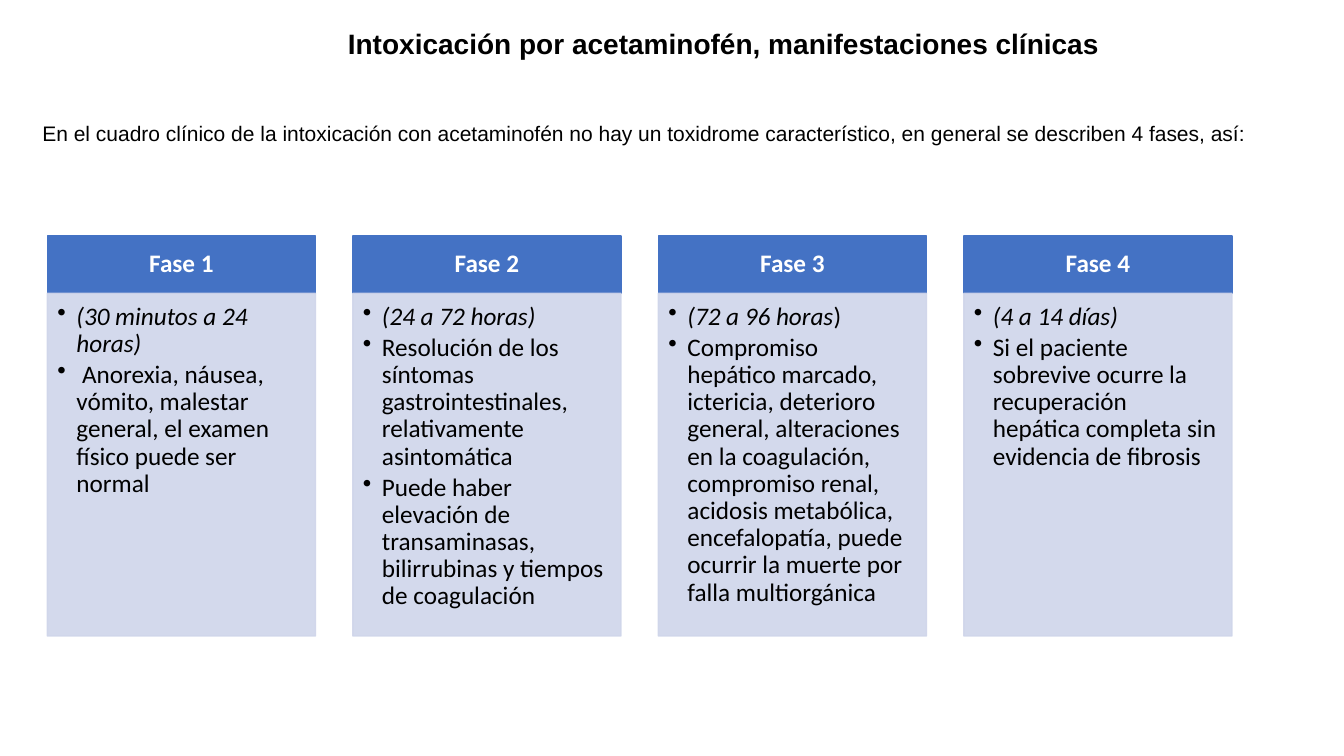
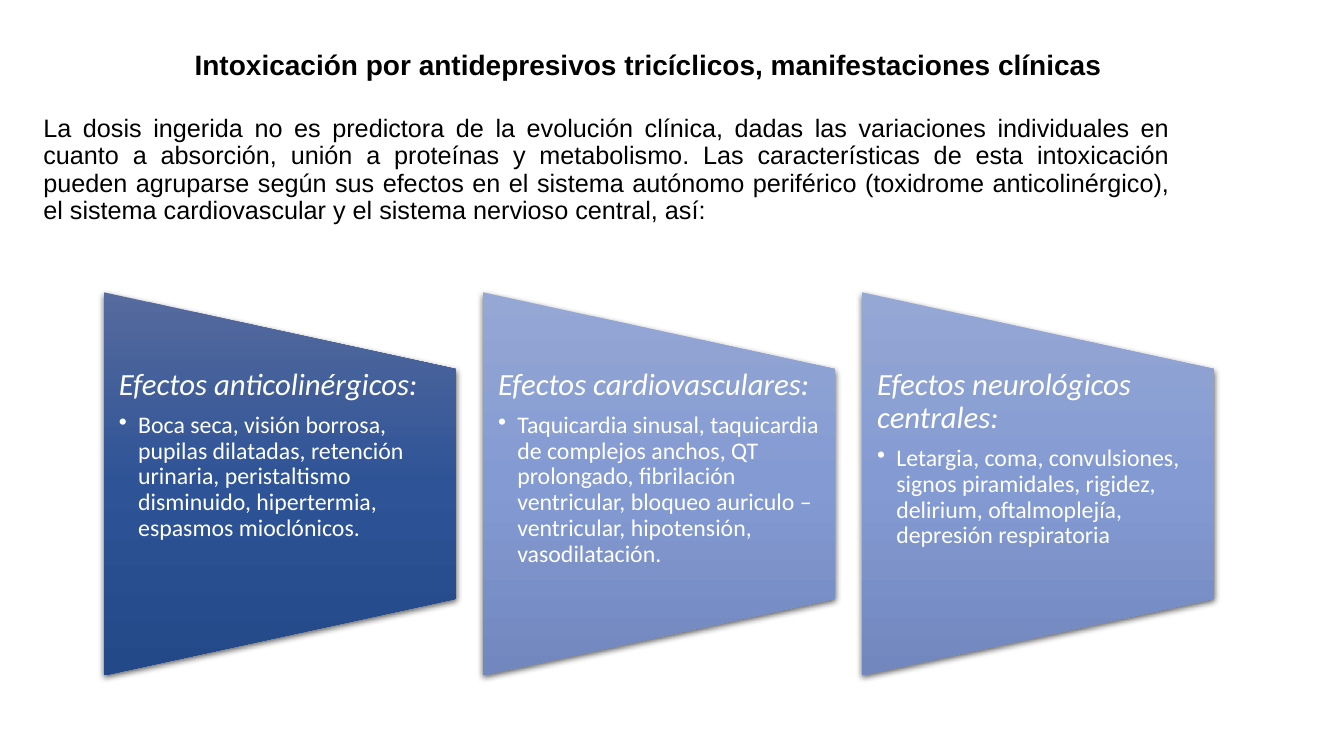
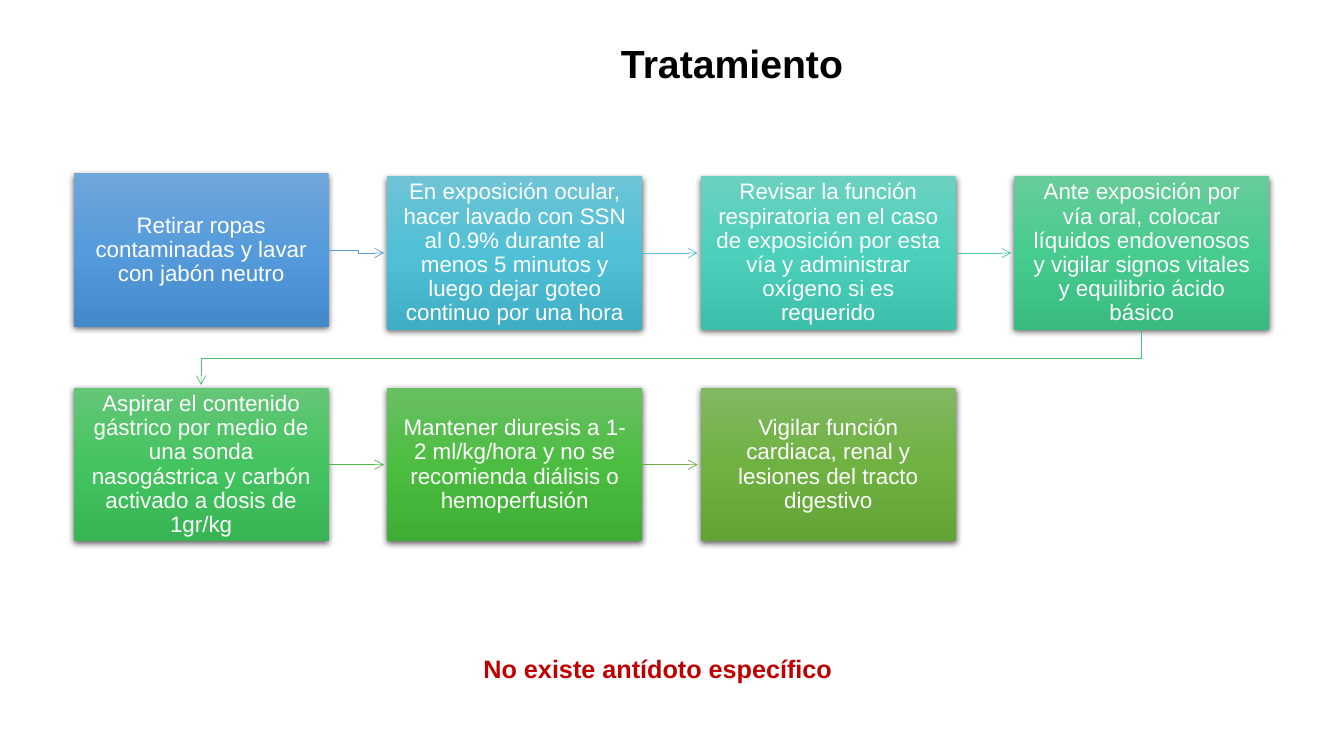
"""Build three slides on the clinical picture and treatment of poisoning."""
from copy import deepcopy
from dataclasses import dataclass

from lxml import etree
from pptx import Presentation
from pptx import util as u
from pptx.dml.color import RGBColor
from pptx.enum import shapes, text
from pptx.oxml import ns


@dataclass(frozen=True)
class Theme:
    """Colours, fonts and type sizes of the deck."""
    ink: str = "000000"
    white: str = "FFFFFF"
    header: str = "4472C4"
    panel: str = "CFD5EA"
    alert: str = "C00000"
    deep: tuple = ("566B9E", "2E5396", "244989")
    soft: tuple = ("95A7D4", "849AD2", "7187BE")
    sans: str = "Arial"
    label: str = "Calibri"
    small: int = 15
    step: int = 16
    detail: int = 17
    normal: int = 18
    title: int = 20
    heading: int = 22
    large: int = 28


@dataclass(frozen=True)
class Grid:
    """Equal cells, in inches."""
    left: float
    top: float
    width: float
    height: float
    pitch: float
    row_pitch: float = 0

    def cell(self, column, row=0):
        """Return left, top, width and height of one cell."""
        return (self.left + column * self.pitch, self.top + row * self.row_pitch,
                self.width, self.height)


THEME = Theme()
LEFT, CENTER, JUSTIFY = text.PP_ALIGN.LEFT, text.PP_ALIGN.CENTER, text.PP_ALIGN.JUSTIFY
TOP, MIDDLE = text.MSO_ANCHOR.TOP, text.MSO_ANCHOR.MIDDLE
RECTANGLE = shapes.MSO_SHAPE.RECTANGLE
TRAPEZOID = shapes.MSO_SHAPE.FLOWCHART_MANUAL_OPERATION

PHASES = [
    ("Fase 1", ("(30 minutos a 24 horas)", ""),
     [" Anorexia, náusea, vómito, malestar general, el examen físico puede ser normal"]),
    ("Fase 2", ("(24 a 72 horas)", ""),
     ["Resolución de los síntomas gastrointestinales, relativamente asintomática",
      "Puede haber elevación de transaminasas, bilirrubinas y tiempos de coagulación"]),
    ("Fase 3", ("(72 a 96 horas", ")"),
     ["Compromiso hepático marcado, ictericia, deterioro general, alteraciones en la "
      "coagulación, compromiso renal, acidosis metabólica, encefalopatía, puede ocurrir "
      "la muerte por falla multiorgánica"]),
    ("Fase 4", ("(4 a 14 días)", ""),
     ["Si el paciente sobrevive ocurre la recuperación hepática completa sin evidencia "
      "de fibrosis"]),
]
EFFECTS = [
    ("Efectos anticolinérgicos:",
     "Boca seca, visión borrosa, pupilas dilatadas, retención urinaria, peristaltismo "
     "disminuido, hipertermia, espasmos mioclónicos.", THEME.deep),
    ("Efectos cardiovasculares:",
     "Taquicardia sinusal, taquicardia de complejos anchos, QT prolongado, fibrilación "
     "ventricular, bloqueo auriculo – ventricular, hipotensión, vasodilatación.", THEME.soft),
    ("Efectos neurológicos centrales:",
     "Letargia, coma, convulsiones, signos piramidales, rigidez, delirium, oftalmoplejía, "
     "depresión respiratoria", THEME.soft),
]
STEPS = [
    ("Retirar ropas contaminadas y lavar con jabón neutro",
     ("71A6DB", "559BDB", "448ACA"), "5B9BD5"),
    ("En exposición ocular, hacer lavado con SSN al 0.9% durante al menos 5 minutos y "
     "luego dejar goteo continuo por una hora", ("6EC4D6", "50C0D6", "40AFC5"), "55C3CF"),
    ("Revisar la función respiratoria en el caso de exposición por esta vía y administrar "
     "oxígeno si es requerido", ("6AD1C0", "4CD0BC", "3CC0AC"), "50C8A7"),
    ("Ante exposición por vía oral, colocar líquidos endovenosos y vigilar signos vitales "
     "y equilibrio ácido básico", ("67CC9A", "47CB8E", "39BB7F"), "4BC174"),
    ("Aspirar el contenido gástrico por medio de una sonda nasogástrica y carbón activado "
     "a dosis de 1gr/kg", ("64C677", "44C460", "36B552"), "4ABA46"),
    ("Mantener diuresis a 1-2 ml/kg/hora y no se recomienda diálisis o hemoperfusión",
     ("69C062", "4CBD41", "3FAD34"), "70AD47"),
    ("Vigilar función cardiaca, renal y lesiones del tracto digestivo",
     ("81B861", "6FB242", "62A336"), None),
]


def rgb(color):
    """Turn a hex string into a colour."""
    return RGBColor.from_string(color)


def inches(values):
    """Turn numbers into lengths."""
    return [u.Inches(value) for value in values]


def add_node(parent, tag, **attributes):
    """Append one drawing element."""
    return etree.SubElement(parent, ns.qn(tag), attributes)


def write(frame, words, tail="", size=THEME.normal, color=THEME.ink, font=THEME.sans,
          bold=False, italic=False, align=LEFT, bullet=False, after=0, spacing=0.9):
    """Write one paragraph, with an optional upright tail."""
    para = frame.paragraphs[-1]
    if para.runs:
        para = frame.add_paragraph()
    indent = u.Inches(0.19) if bullet else 0
    properties = para._p.get_or_add_pPr()
    properties.set("marL", str(indent))
    properties.set("indent", str(-indent))
    if bullet:
        add_node(properties, "a:buChar", char="•")
    else:
        add_node(properties, "a:buNone")
    para.alignment = align
    para.line_spacing = spacing
    para.space_before = u.Pt(0)
    para.space_after = u.Pt(round(after * size, 1))
    for part, slanted in ((words, italic), (tail, False)):
        if part:
            span = para.add_run()
            span.text = part
            span.font.size = u.Pt(size)
            span.font.name = font
            span.font.bold = bold
            span.font.italic = slanted
            span.font.color.rgb = rgb(color)


def set_frame(box, anchor=TOP, insets=(0.1, 0.05, 0.1, 0.05)):
    """Prepare the text frame of a shape and return it."""
    frame = box.text_frame
    frame.word_wrap = True
    frame.auto_size = text.MSO_AUTO_SIZE.NONE
    frame.vertical_anchor = anchor
    (frame.margin_left, frame.margin_top,
     frame.margin_right, frame.margin_bottom) = inches(insets)
    return frame


def place(box, area):
    """Move and size a placeholder."""
    box.left, box.top, box.width, box.height = inches(area)


def add_page(deck, title, area, size=THEME.title, align=LEFT):
    """Add a page with a bold title."""
    page = deck.slides.add_slide(deck.slide_layouts[1])
    place(page.shapes.title, area)
    write(set_frame(page.shapes.title, MIDDLE), title, size=size, bold=True, align=align)
    return page


def add_intro(page, words, area, **style):
    """Fill the body placeholder with one plain paragraph."""
    body = page.placeholders[1]
    place(body, area)
    write(set_frame(body), words, **style)


def add_flat(page, area, color, opacity=100):
    """Add a rectangle with fill and line of one colour."""
    box = page.shapes.add_shape(RECTANGLE, *inches(area))
    box.shadow.inherit = False
    box.fill.solid()
    box.fill.fore_color.rgb = rgb(color)
    box.line.color.rgb = rgb(color)
    box.line.width = u.Pt(1)
    if opacity < 100:
        for node in box._element.spPr.iter(ns.qn("a:srgbClr")):
            add_node(node, "a:alpha", val=str(opacity * 1000))
    return box


def add_shaded(page, kind, area, colors):
    """Add a shape with a vertical gradient and a soft shadow."""
    box = page.shapes.add_shape(kind, *inches(area))
    box.line.fill.background()
    box.fill.gradient()
    box.fill.gradient_angle = 270
    properties = box._element.spPr
    properties.find(ns.qn("a:gradFill")).set("rotWithShape", "0")
    stops = properties.find(".//" + ns.qn("a:gsLst"))
    stops.insert(1, deepcopy(stops[0]))
    for stop, color, position in zip(box.fill.gradient_stops, colors, (0, 0.5, 1)):
        stop.color.rgb = rgb(color)
        stop.position = position
    box.shadow.inherit = False
    shadow = add_node(properties.find(ns.qn("a:effectLst")), "a:outerShdw",
                      blurRad=str(u.Pt(4.5)), dist=str(u.Pt(1.5)), dir="5400000",
                      algn="ctr", rotWithShape="0")
    add_node(add_node(shadow, "a:srgbClr", val=THEME.ink), "a:alpha", val="63000")
    return box


def style_arrow(arrow, color):
    """Give a line its colour, width and open arrowhead."""
    arrow.line.color.rgb = rgb(color)
    arrow.line.width = u.Pt(0.5)
    add_node(arrow._element.spPr.find(ns.qn("a:ln")), "a:tailEnd", type="arrow")


def add_straight_arrow(page, source, end, color):
    """Draw a level arrow from the right side of a box."""
    middle = source.top + source.height // 2
    arrow = page.shapes.add_connector(shapes.MSO_CONNECTOR.STRAIGHT,
                                      source.left + source.width, middle, end, middle)
    arrow.begin_connect(source, 3)
    style_arrow(arrow, color)
    add_node(arrow._element.spPr, "a:effectLst")


def add_bent_arrow(page, points, color):
    """Draw an arrow along a route of points."""
    route = page.shapes.build_freeform(*points[0], scale=1.0)
    route.add_line_segments(points[1:], close=False)
    arrow = route.convert_to_shape()
    arrow.fill.background()
    arrow.shadow.inherit = False
    style_arrow(arrow, color)


def join_steps(page, source, target, color):
    """Link two steps with the route that their places call for."""
    gap, half_gap = u.Inches(0.03), u.Inches(0.29)
    start_x, end_x = source.left + source.width, target.left - gap
    start_y = source.top + source.height // 2
    end_y = target.top + target.height // 2
    if start_y == end_y:
        add_straight_arrow(page, source, end_x, color)
    elif target.left > source.left:
        bend = start_x + half_gap
        add_bent_arrow(page, [(start_x, start_y), (bend, start_y),
                              (bend, end_y), (end_x, end_y)], color)
    else:
        start_x = source.left + source.width // 2
        end_x = target.left + target.width // 2
        bottom = source.top + source.height
        bend = bottom + half_gap
        add_bent_arrow(page, [(start_x, bottom), (start_x, bend),
                              (end_x, bend), (end_x, target.top - gap)], color)


def add_phase(page, area, name, period, signs):
    """Add a phase column: header above a bulleted panel."""
    left, top, width, height = area
    header_height = 0.57
    header = add_flat(page, (left, top, width, header_height), THEME.header)
    write(set_frame(header, MIDDLE, (0.14, 0.08, 0.14, 0.08)), name, color=THEME.white,
          font=THEME.label, bold=True, align=CENTER)
    panel = add_flat(page, (left, top + header_height, width, height - header_height),
                     THEME.panel, opacity=90)
    frame = set_frame(panel, insets=(0.1, 0.1, 0.14, 0.16))
    style = dict(font=THEME.label, bullet=True, after=0.15)
    write(frame, *period, italic=True, **style)
    for sign in signs:
        write(frame, sign, **style)


def add_effect(page, area, heading, detail, colors):
    """Add a sideways trapezoid with its heading and detail."""
    left, top, width, height = area
    shift = (height - width) / 2
    box = add_shaded(page, TRAPEZOID, (left - shift, top + shift, height, width), colors)
    box.rotation = 270
    label = page.shapes.add_textbox(*inches((left, top + height * 0.2, width, height * 0.6)))
    frame = set_frame(label, insets=(0.15, 0, 0.15, 0))
    style = dict(font=THEME.label, color=THEME.white)
    write(frame, heading, size=THEME.heading, italic=True, after=0.35, **style)
    write(frame, detail, size=THEME.detail, bullet=True, after=0.15, **style)


def add_step(page, area, words, colors):
    """Add one treatment step."""
    box = add_shaded(page, RECTANGLE, area, colors)
    write(set_frame(box, MIDDLE, (0.12,) * 4), words, size=THEME.step,
          color=THEME.white, align=CENTER)
    return box


def build_phases(deck):
    """Build the page on the four phases."""
    page = add_page(deck, "Intoxicación por acetaminofén, manifestaciones clínicas",
                    (3.35, 0.12, 8.32, 0.66))
    add_intro(page, "En el cuadro clínico de la intoxicación con acetaminofén no hay un "
              "toxidrome característico, en general se describen 4 fases, así:",
              (0.32, 1.17, 12.6, 0.66), size=THEME.small)
    grid = Grid(left=0.47, top=2.34, width=2.66, height=3.97, pitch=3.03)
    for column, phase in enumerate(PHASES):
        add_phase(page, grid.cell(column), *phase)


def build_effects(deck):
    """Build the page on the three groups of effects."""
    page = add_page(deck, "Intoxicación por antidepresivos tricíclicos, manifestaciones "
                    "clínicas", (1.83, 0.37, 9.44, 0.58))
    add_intro(page, "La dosis ingerida no es predictora de la evolución clínica, dadas las "
              "variaciones individuales en cuanto a absorción, unión a proteínas y "
              "metabolismo. Las características de esta intoxicación pueden agruparse según "
              "sus efectos en el sistema autónomo periférico (toxidrome anticolinérgico), "
              "el sistema cardiovascular y el sistema nervioso central, así:",
              (0.33, 1.1, 11.37, 1.29), align=JUSTIFY)
    grid = Grid(left=1.03, top=2.9, width=3.49, height=3.8, pitch=3.76)
    for column, effect in enumerate(EFFECTS):
        add_effect(page, grid.cell(column), *effect)


def build_treatment(deck):
    """Build the page on the treatment steps."""
    page = add_page(deck, "Tratamiento", (1.51, 0.25, 11.5, 0.81),
                    size=THEME.large, align=CENTER)
    body = page.placeholders[1]._element
    body.getparent().remove(body)
    grid = Grid(left=0.73, top=1.75, width=2.53, height=1.52, pitch=3.11, row_pitch=2.1)
    boxes = []
    for index, (words, colors, _) in enumerate(STEPS):
        row, column = divmod(index, 4)
        left, top, width, height = grid.cell(column, row)
        lift = 0.03 if index == 0 else 0
        boxes.append(add_step(page, (left, top - lift, width, height), words, colors))
    for source, target, (_, _, color) in zip(boxes, boxes[1:], STEPS):
        join_steps(page, source, target, color)
    note = page.shapes.add_textbox(*inches((4.31, 6.43, 4.43, 0.4)))
    write(set_frame(note), "No existe antídoto específico", color=THEME.alert,
          bold=True, align=CENTER, spacing=1.0)


def main():
    """Build and save the deck."""
    deck = Presentation()
    deck.slide_width, deck.slide_height = inches((13.33, 7.5))
    build_phases(deck)
    build_effects(deck)
    build_treatment(deck)
    deck.save("out.pptx")


if __name__ == "__main__":
    main()
